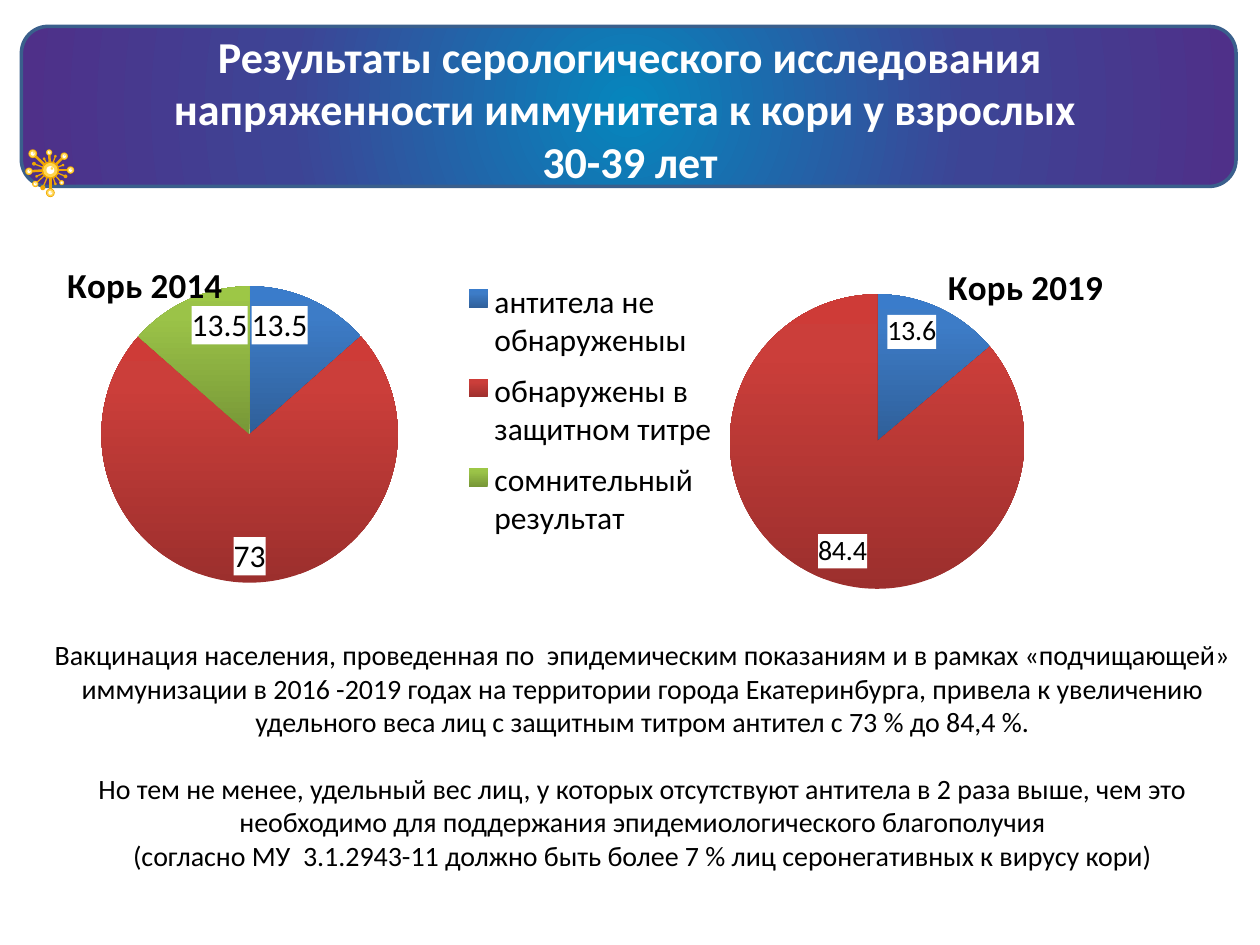
from dataclasses import dataclass
from math import hypot

from lxml.etree import SubElement
from pptx import Presentation
from pptx.chart.data import CategoryChartData
from pptx.dml.color import RGBColor
from pptx.enum.chart import XL_CHART_TYPE as ChartType
from pptx.enum.chart import XL_LABEL_POSITION as LabelPosition
from pptx.enum.chart import XL_LEGEND_POSITION as LegendPosition
from pptx.enum.shapes import MSO_SHAPE as ShapeType
from pptx.enum.text import MSO_ANCHOR as Anchor
from pptx.enum.text import PP_ALIGN as Align
from pptx.oxml import parse_xml
from pptx.oxml.ns import nsdecls, qn
from pptx.util import Inches, Pt

FONT = "Calibri"
COLORS = {
    "white": "FFFFFF", "black": "000000", "banner_line": "3A5F8C",
    "amber": "F0A702", "yellow": "FFD54E",
}
BANNER_STOPS = [(0, "0586BD"), (56, "3D4495"), (100, "4F3089")]
SLICE_STOPS = [
    [(0, "2F5F99"), (80, "3D7CC7"), (100, "3A7CCB")],
    [(0, "9C2F2D"), (80, "CB3E3A"), (100, "CE3B37")],
    [(0, "779737"), (80, "9BC348"), (100, "9DC746")],
]


@dataclass
class Pie:
    title: str
    box: tuple[float, float, float, float]
    categories: list[str]
    values: list[float]
    plot_layout: dict[str, float]
    title_layout: dict[str, float]
    label_size: int
    legend_layout: dict[str, float] | None = None


@dataclass
class Spike:
    x: float
    y: float
    size: float
    stem: float
    has_rings: bool = True


PIES = [
    Pie("Корь 2014", (0.43, 1.7, 5.35, 3.18),
        ["антитела не обнаруженыы", "обнаружены в защитном титре",
         "сомнительный результат"],
        [13.5, 73, 13.5],
        {"x": 0.07, "y": 0.18, "w": 0.44, "h": 0.74},
        {"x": 0.01, "y": 0.1}, 18,
        {"x": 0.59, "y": 0.14, "w": 0.41, "h": 0.7}),
    Pie("Корь 2019", (4.76, 1.47, 5.12, 4.33), ["1", "2"], [13.6, 84.4],
        {"x": 0.2, "y": 0.2, "w": 0.46, "h": 0.54},
        {"x": 0.53, "y": 0.13}, 16),
]
CORE = Spike(0.4, 1.35, 0.14, 0)
SPIKES = [
    Spike(0.39, 1.21, 0.05, 0.02), Spike(0.56, 1.35, 0.06, 0.02),
    Spike(0.23, 1.36, 0.06, 0.02), Spike(0.4, 1.53, 0.07, 0.02),
    Spike(0.51, 1.24, 0.06, 0.02), Spike(0.26, 1.22, 0.07, 0.02),
    Spike(0.49, 1.45, 0.04, 0.01), Spike(0.28, 1.46, 0.05, 0.01),
    Spike(0.5, 1.31, 0.02, 0.01, False), Spike(0.27, 1.3, 0.03, 0.01, False),
    Spike(0.35, 1.26, 0.02, 0.01, False), Spike(0.44, 1.24, 0.02, 0.01, False),
    Spike(0.52, 1.4, 0.03, 0.01, False), Spike(0.44, 1.46, 0.02, 0.01, False),
    Spike(0.34, 1.49, 0.04, 0.01, False), Spike(0.29, 1.4, 0.02, 0.01, False),
]
PARAGRAPHS = [
    ("Вакцинация населения, проведенная по  эпидемическим показаниям и в рамках "
     "«подчищающей» иммунизации в 2016 -2019 годах на территории города "
     "Екатеринбурга, привела к увеличению удельного веса лиц с защитным титром "
     "антител с 73 % до 84,4 %.", 0),
    ("Но тем не менее, удельный вес лиц, у которых отсутствуют антитела в 2 раза "
     "выше, чем это необходимо для поддержания эпидемиологического благополучия", 19),
    ("(согласно МУ  3.1.2943-11 должно быть более 7 % лиц серонегативных "
     "к вирусу кори)", 0),
]


def color(name: str) -> RGBColor:
    return RGBColor.from_string(COLORS[name])


def style_font(font, size: float, name: str = "black", bold: bool = False) -> None:
    font.name, font.size, font.bold = FONT, Pt(size), bold
    font.color.rgb = color(name)


def set_stops(gradient, stops: list[tuple[int, str]], radial: bool = False) -> None:
    """Refill an a:gradFill element with stops, upward or from the centre."""
    for child in list(gradient):
        gradient.remove(child)
    stop_list = SubElement(gradient, qn("a:gsLst"))
    for position, value in stops:
        stop = SubElement(stop_list, qn("a:gs"), pos=str(position * 1000))
        SubElement(stop, qn("a:srgbClr"), val=value)
    if radial:
        path = SubElement(gradient, qn("a:path"), path="circle")
        sides = dict.fromkeys("ltrb", "50000")
        SubElement(path, qn("a:fillToRect"), **sides)
    else:
        SubElement(gradient, qn("a:lin"), ang="16200000", scaled="0")


def set_layout(element, index: int, fractions: dict[str, float],
               inner: bool = False) -> None:
    """Give a chart part a fixed place, in fractions of the chart."""
    for old in element.findall(qn("c:layout")):
        element.remove(old)
    layout = parse_xml(f"<c:layout {nsdecls('c')}><c:manualLayout/></c:layout>")
    manual = layout[0]
    if inner:
        SubElement(manual, qn("c:layoutTarget"), val="inner")
    for axis in "xy":
        SubElement(manual, qn(f"c:{axis}Mode"), val="edge")
    for key, value in fractions.items():
        SubElement(manual, qn(f"c:{key}"), val=str(value))
    element.insert(index, layout)


def draw_pie(slide, pie: Pie) -> None:
    data = CategoryChartData()
    data.categories = pie.categories
    data.add_series("Series 1", pie.values)
    chart = slide.shapes.add_chart(ChartType.PIE, *map(Inches, pie.box), data).chart
    style_font(chart.font, pie.label_size)

    # Title, plot and legend places
    chart.has_title = True
    run = chart.chart_title.text_frame.paragraphs[0].add_run()
    run.text = pie.title
    style_font(run.font, 20, bold=True)
    set_layout(chart.chart_title.element, 1, pie.title_layout)
    set_layout(next(chart.element.iter(qn("c:plotArea"))), 0, pie.plot_layout, True)
    chart.has_legend = pie.legend_layout is not None
    if pie.legend_layout:
        chart.legend.position = LegendPosition.RIGHT
        chart.legend.include_in_layout = False
        style_font(chart.legend.font, 18)
        set_layout(next(chart.element.iter(qn("c:legend"))), 1, pie.legend_layout)

    # Slices
    plot = chart.plots[0]
    plot.vary_by_categories = True
    series = plot.series[0]
    for index in range(len(pie.values)):
        series.points[index].format.fill.gradient()
    for gradient, stops in zip(chart.element.iter(qn("a:gradFill")), SLICE_STOPS):
        set_stops(gradient, stops)

    # Value labels on white
    labels = series.data_labels
    labels.show_value = True
    labels.position = LabelPosition.INSIDE_END
    style_font(labels.font, pie.label_size)
    label_element = next(chart.element.iter(qn("c:dLbls")))
    label_element.find(qn("c:txPr")).addprevious(parse_xml(
        f"<c:spPr {nsdecls('c', 'a')}><a:solidFill>"
        f"<a:srgbClr val=\"{COLORS['white']}\"/></a:solidFill></c:spPr>"))


def fill_plain(shape, name: str) -> None:
    shape.shadow.inherit = False
    shape.fill.solid()
    shape.fill.fore_color.rgb = color(name)
    shape.line.fill.background()


def draw_dot(shapes, x: float, y: float, size: float, name: str) -> None:
    dot = shapes.add_shape(ShapeType.OVAL, Inches(x - size / 2),
                           Inches(y - size / 2), Inches(size), Inches(size))
    fill_plain(dot, name)


def draw_knob(shapes, knob: Spike) -> None:
    draw_dot(shapes, knob.x, knob.y, knob.size, "amber")
    if knob.has_rings:
        draw_dot(shapes, knob.x, knob.y, knob.size * 0.82, "yellow")
        draw_dot(shapes, knob.x, knob.y, knob.size * 0.45, "white")
        shift = knob.size * 0.09
        draw_dot(shapes, knob.x + shift, knob.y - shift, knob.size * 0.14, "yellow")


def draw_stem(shapes, spike: Spike) -> None:
    dx, dy = spike.x - CORE.x, spike.y - CORE.y
    half = spike.stem / 2 / hypot(dx, dy)
    across, along = -dy * half, dx * half
    corners = [(Inches(part.x + side * across), Inches(part.y + side * along))
               for part, side in ((CORE, 1), (spike, 1), (spike, -1), (CORE, -1))]
    builder = shapes.build_freeform(*corners[0])
    builder.add_line_segments(corners[1:], close=True)
    fill_plain(builder.convert_to_shape(), "amber")


def main() -> None:
    presentation = Presentation()
    presentation.slide_width, presentation.slide_height = Inches(10), Inches(7.5)
    slide = presentation.slides.add_slide(presentation.slide_layouts[5])

    # Banner behind the title
    title = slide.shapes.title
    banner = slide.shapes.add_shape(ShapeType.ROUNDED_RECTANGLE, Inches(0.17),
                                    Inches(0.21), Inches(9.64), Inches(1.27))
    banner.shadow.inherit = False
    banner.fill.gradient()
    set_stops(next(banner.element.iter(qn("a:gradFill"))), BANNER_STOPS, radial=True)
    banner.line.color.rgb = color("banner_line")
    banner.line.width = Pt(2)
    title.element.addprevious(banner.element)

    # Title
    title.left, title.top = Inches(0.69), Inches(0.21)
    title.width, title.height = Inches(8.62), Inches(1.3)
    title.text_frame.vertical_anchor = Anchor.MIDDLE
    paragraph = title.text_frame.paragraphs[0]
    paragraph.alignment = Align.CENTER
    for index, text in enumerate(["Результаты серологического исследования "
                                  "напряженности иммунитета к кори у взрослых ",
                                  "30-39 лет"]):
        if index:
            paragraph.add_line_break()
        run = paragraph.add_run()
        run.text = text
        style_font(run.font, 25.2, "white", bold=True)

    # Virus emblem
    emblem = slide.shapes.add_group_shape().shapes
    for spike in SPIKES:
        draw_stem(emblem, spike)
    for knob in [*SPIKES, CORE]:
        draw_knob(emblem, knob)

    # Charts
    for pie in PIES:
        draw_pie(slide, pie)

    # Conclusions
    frame = slide.shapes.add_textbox(Inches(0.24), Inches(5.01),
                                     Inches(9.72), Inches(1.99)).text_frame
    frame.word_wrap = True
    for index, (text, gap) in enumerate(PARAGRAPHS):
        paragraph = frame.add_paragraph() if index else frame.paragraphs[0]
        paragraph.alignment = Align.CENTER
        paragraph.space_before = Pt(gap)
        run = paragraph.add_run()
        run.text = text
        style_font(run.font, 16)

    presentation.save("out.pptx")


if __name__ == "__main__":
    main()
